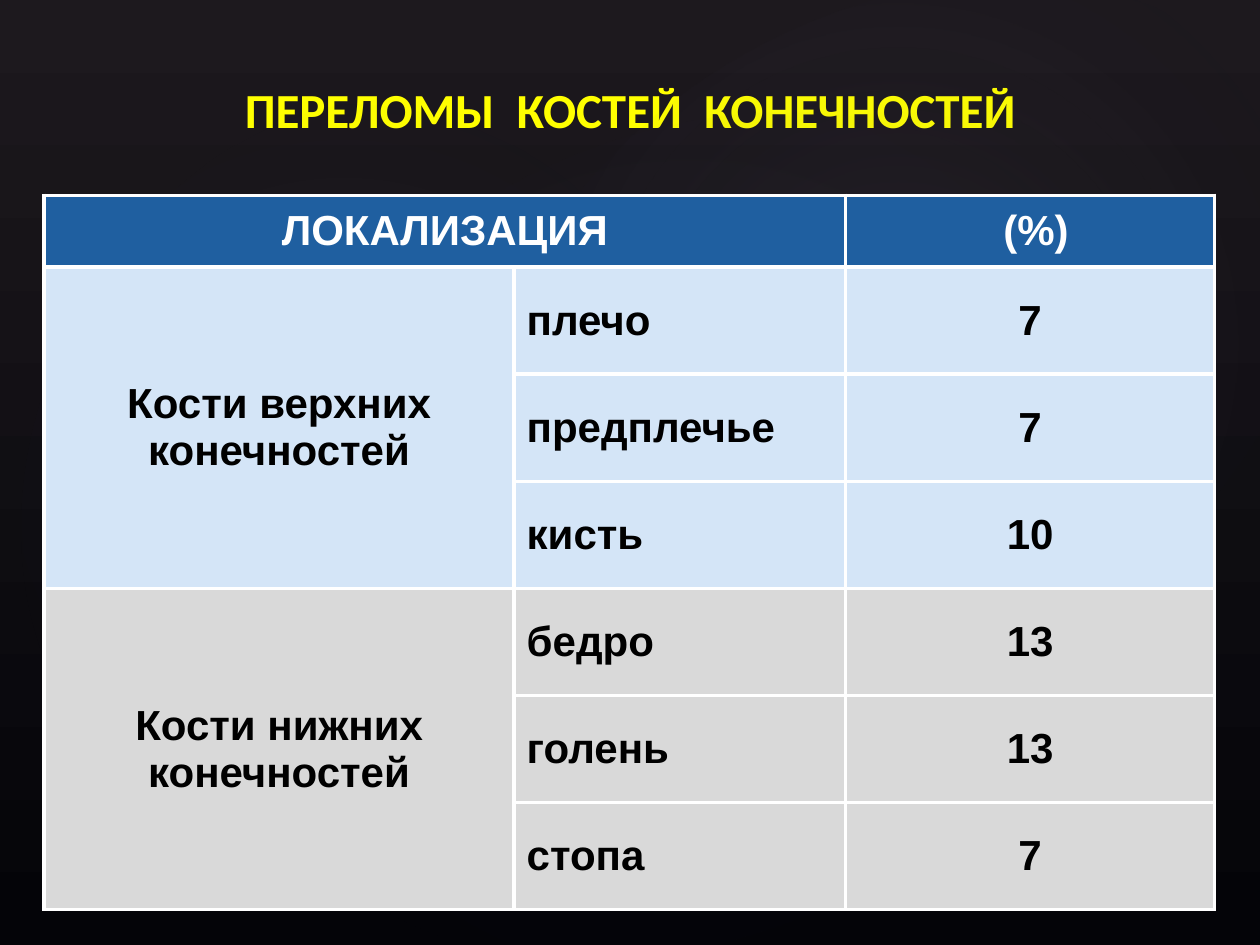
from dataclasses import dataclass

from lxml import etree
from pptx import Presentation
from pptx.dml.color import RGBColor
from pptx.enum.shapes import MSO_SHAPE
from pptx.enum.text import MSO_ANCHOR, PP_ALIGN
from pptx.oxml import parse_xml
from pptx.oxml.ns import qn
from pptx.util import Pt

CENTER, LEFT = PP_ALIGN.CENTER, PP_ALIGN.LEFT
MIDDLE, BOTTOM = MSO_ANCHOR.MIDDLE, MSO_ANCHOR.BOTTOM
OVAL = MSO_SHAPE.OVAL
NS = "http://schemas.openxmlformats.org/drawingml/2006/main"
COLORS = {
    "bg_top": "1D191E",
    "bg_bottom": "040408",
    "glow": "C4BCC6",
    "glow_edge": "242852",
    "title": "FFFF00",
    "header": "1F5FA0",
    "upper": "D4E5F7",
    "lower": "D9D9D9",
    "white": "FFFFFF",
    "text": "000000",
}
COL_WIDTHS = (268.6, 189.4, 211)
HEADER_HEIGHT, ROW_HEIGHT = 41, 61.2
BORDER = 2.25


@dataclass
class Glow:
    left: float
    top: float
    width: float
    height: float
    rotation: float
    alpha: int


@dataclass
class Group:
    name: str
    fill: str
    rows: list[tuple[str, int]]


GLOWS = [
    Glow(108, 82, 570, 449, 328.7, 7),
    Glow(-21.6, 92, 436, 353, 294.3, 8),
    Glow(258, 9.4, 510, 374, 328.7, 8),
]
GROUPS = [
    Group("Кости верхних конечностей", "upper",
          [("плечо", 7), ("предплечье", 7), ("кисть", 10)]),
    Group("Кости нижних конечностей", "lower",
          [("бедро", 13), ("голень", 13), ("стопа", 7)]),
]


def rgb(name: str) -> RGBColor:
    return RGBColor.from_string(COLORS[name])


def style_paragraph(p, font: str, size: float, color: str, align) -> None:
    p.alignment = align
    p.font.name = font
    p.font.size = Pt(size)
    p.font.bold = True
    p.font.color.rgb = rgb(color)


def draw_background(s) -> None:
    fill = s.background.fill
    fill.gradient()
    fill.gradient_angle = 270
    for stop, name in zip(fill.gradient_stops, ("bg_top", "bg_bottom")):
        stop.color.rgb = rgb(name)


def draw_glow(s, glow: Glow) -> None:
    sp = s.shapes.add_shape(OVAL, Pt(glow.left), Pt(glow.top),
                            Pt(glow.width), Pt(glow.height))
    sp.rotation = glow.rotation
    sp.shadow.inherit = False
    sp.line.fill.background()
    sp.fill.background()
    stops = "".join(
        f'<a:gs pos="{pos * 1000}"><a:srgbClr val="{COLORS[name]}">'
        f'<a:alpha val="{alpha * 1000}"/></a:srgbClr></a:gs>'
        for pos, name, alpha in ((0, "glow", glow.alpha), (58, "glow_edge", 0)))
    gradient = parse_xml(
        f'<a:gradFill xmlns:a="{NS}" rotWithShape="1"><a:gsLst>{stops}</a:gsLst>'
        '<a:path path="circle"><a:fillToRect l="50000" t="50000" r="50000" '
        'b="50000"/></a:path></a:gradFill>')
    sp_pr = sp.fill._xPr
    sp_pr.replace(sp_pr.find(qn("a:noFill")), gradient)


def draw_title(s, text: str) -> None:
    title = s.shapes.title
    title.left, title.top, title.width, title.height = Pt(36), Pt(21.6), Pt(648), Pt(61.2)
    tf = title.text_frame
    tf.text = text
    tf.vertical_anchor = BOTTOM
    style_paragraph(tf.paragraphs[0], "Calibri", 28, "title", CENTER)


def style_cell(cell, fill: str) -> None:
    tc_pr = cell._tc.get_or_add_tcPr()
    for side in ("lnL", "lnR", "lnT", "lnB"):
        ln = etree.SubElement(tc_pr, qn(f"a:{side}"), w=str(Pt(BORDER)))
        solid = etree.SubElement(ln, qn("a:solidFill"))
        etree.SubElement(solid, qn("a:srgbClr"), val=COLORS["white"])
    cell.fill.solid()
    cell.fill.fore_color.rgb = rgb(fill)
    cell.vertical_anchor = MIDDLE


def write_cell(cell, text: str, color: str = "text", align=CENTER) -> None:
    cell.text = text
    style_paragraph(cell.text_frame.paragraphs[0], "Arial", 24, color, align)


def draw_table(s, groups: list[Group]) -> None:
    fills = ["header"] + [g.fill for g in groups for _ in g.rows]
    height = HEADER_HEIGHT + ROW_HEIGHT * (len(fills) - 1)
    table = s.shapes.add_table(len(fills), len(COL_WIDTHS), Pt(25.2), Pt(111.6),
                               Pt(sum(COL_WIDTHS)), Pt(height)).table
    for column, width in zip(table.columns, COL_WIDTHS):
        column.width = Pt(width)
    for i, fill in enumerate(fills):
        table.rows[i].height = Pt(ROW_HEIGHT if i else HEADER_HEIGHT)
        for cell in table.rows[i].cells:
            style_cell(cell, fill)

    table.cell(0, 0).merge(table.cell(0, 1))
    write_cell(table.cell(0, 0), "ЛОКАЛИЗАЦИЯ", "white")
    write_cell(table.cell(0, 2), " (%)", "white")
    first = 1
    for group in groups:
        last = first + len(group.rows) - 1
        table.cell(first, 0).merge(table.cell(last, 0))
        write_cell(table.cell(first, 0), group.name)
        for i, (bone, percent) in enumerate(group.rows, first):
            write_cell(table.cell(i, 1), bone, align=LEFT)
            write_cell(table.cell(i, 2), str(percent))
        first = last + 1


def main() -> None:
    prs = Presentation()
    prs.slide_width, prs.slide_height = Pt(720), Pt(540)
    s = prs.slides.add_slide(prs.slide_layouts[5])
    draw_background(s)
    for glow in GLOWS:
        draw_glow(s, glow)
    draw_title(s, "ПЕРЕЛОМЫ  КОСТЕЙ  КОНЕЧНОСТЕЙ")
    draw_table(s, GROUPS)
    prs.save("out.pptx")


if __name__ == "__main__":
    main()
